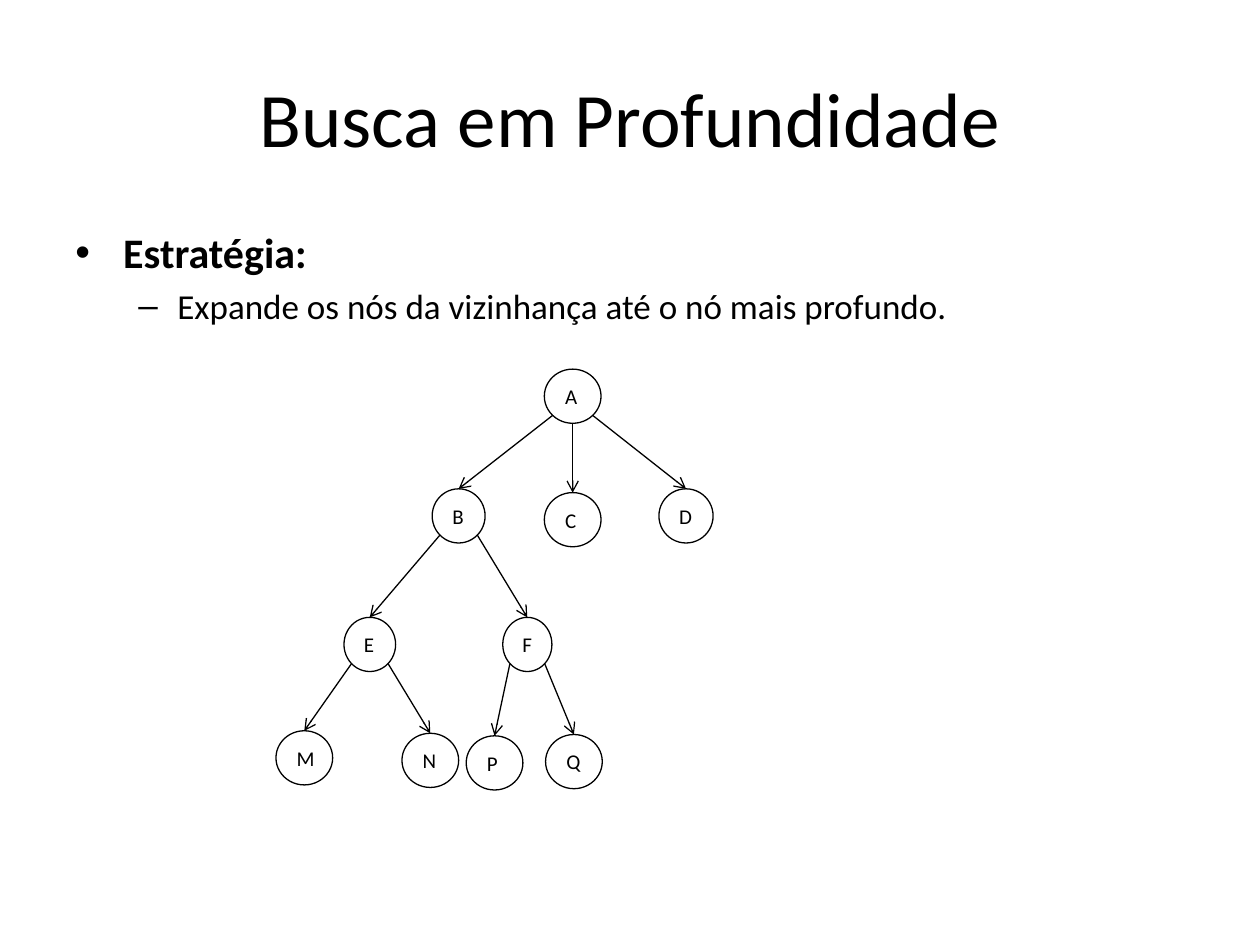
from math import sqrt

from lxml import etree
from pptx import Presentation
from pptx.dml.color import RGBColor
from pptx.enum.shapes import MSO_CONNECTOR as CONN, MSO_SHAPE as SHAPE
from pptx.enum.text import MSO_ANCHOR as ANCHOR, PP_ALIGN as ALIGN
from pptx.oxml.ns import qn
from pptx.util import Inches, Pt

FONT = "Calibri"
BLACK = "000000"
NODE_HEIGHT = 0.43

# name: (left, top, width, wraps)
NODES = {
    "A": (4.32, 2.93, 0.45, True),
    "B": (3.43, 3.88, 0.42, False),
    "C": (4.32, 3.91, 0.45, True),
    "D": (5.23, 3.88, 0.43, False),
    "E": (2.73, 4.9, 0.41, False),
    "F": (3.99, 4.9, 0.39, False),
    "M": (2.19, 5.8, 0.45, False),
    "N": (3.19, 5.82, 0.45, False),
    "P": (3.7, 5.84, 0.45, True),
    "Q": (4.33, 5.83, 0.45, True),
}
# parent: (child, side of the parent: -1 left, 0 bottom, 1 right)
CHILDREN = {
    "A": [("B", -1), ("C", 0), ("D", 1)],
    "B": [("E", -1), ("F", 1)],
    "E": [("M", -1), ("N", 1)],
    "F": [("P", -1), ("Q", 1)],
}


def color(value):
    return RGBColor.from_string(value)


def add_run(p, text, size, bold=False):
    r = p.add_run()
    r.text = text
    r.font.name = FONT
    r.font.size = Pt(size)
    r.font.bold = bold
    r.font.color.rgb = color(BLACK)


def add_textbox(slide, left, top, width, height, anchor):
    tf = slide.shapes.add_textbox(
        Inches(left), Inches(top), Inches(width), Inches(height)).text_frame
    tf.word_wrap = True
    tf.vertical_anchor = anchor
    return tf


def set_bullet(p, char, margin, hanging):
    pPr = p._p.get_or_add_pPr()
    pPr.set("marL", str(Inches(margin)))
    pPr.set("indent", str(-Inches(hanging)))
    etree.SubElement(pPr, qn("a:buFont"), typeface="Arial")
    etree.SubElement(pPr, qn("a:buChar"), char=char)


def add_title(slide, text):
    tf = add_textbox(slide, 0.5, 0.3, 9, 1.25, ANCHOR.MIDDLE)
    p = tf.paragraphs[0]
    p.alignment = ALIGN.CENTER
    add_run(p, text, 44)


def add_strategy(slide):
    tf = add_textbox(slide, 0.5, 1.75, 9, 4.95, ANCHOR.TOP)
    p = tf.paragraphs[0]
    set_bullet(p, "•", 0.38, 0.38)
    add_run(p, "Estratégia:", 24, bold=True)
    p = tf.add_paragraph()
    p.space_before = Pt(4)
    set_bullet(p, "–", 0.81, 0.31)
    add_run(p, "Expande os nós da vizinhança até o nó mais profundo.", 20)


def add_node(slide, name, left, top, width, wraps):
    s = slide.shapes.add_shape(
        SHAPE.OVAL, Inches(left), Inches(top), Inches(width), Inches(NODE_HEIGHT))
    s.shadow.inherit = False
    s.fill.background()
    s.line.color.rgb = color(BLACK)
    s.line.width = Pt(0.75)
    tf = s.text_frame
    tf.word_wrap = wraps
    tf.vertical_anchor = ANCHOR.MIDDLE
    p = tf.paragraphs[0]
    p.alignment = ALIGN.LEFT
    add_run(p, name, 12)
    return s


def add_edge(slide, parent, child, side):
    """Arrow from the parent's lower rim, at 45 degrees or straight down."""
    reach = 1 / sqrt(2) if side else 1
    x = parent.left + parent.width * (1 + side * reach) / 2
    y = parent.top + parent.height * (1 + reach) / 2
    c = slide.shapes.add_connector(
        CONN.STRAIGHT, int(x), int(y), child.left + child.width // 2, child.top)
    c.end_connect(child, 0)
    c.line.color.rgb = color(BLACK)
    c.line.width = Pt(0.75)
    etree.SubElement(c.line._get_or_add_ln(), qn("a:tailEnd"), type="arrow")
    etree.SubElement(c._element.spPr, qn("a:effectLst"))


def add_tree(slide):
    nodes = {name: add_node(slide, name, *place) for name, place in NODES.items()}
    for parent, children in CHILDREN.items():
        for child, side in children:
            add_edge(slide, nodes[parent], nodes[child], side)


def main():
    prs = Presentation()
    prs.slide_width, prs.slide_height = Inches(10), Inches(7.5)
    slide = prs.slides.add_slide(prs.slide_layouts[6])
    add_title(slide, "Busca em Profundidade")
    add_strategy(slide)
    add_tree(slide)
    prs.save("out.pptx")


if __name__ == "__main__":
    main()
